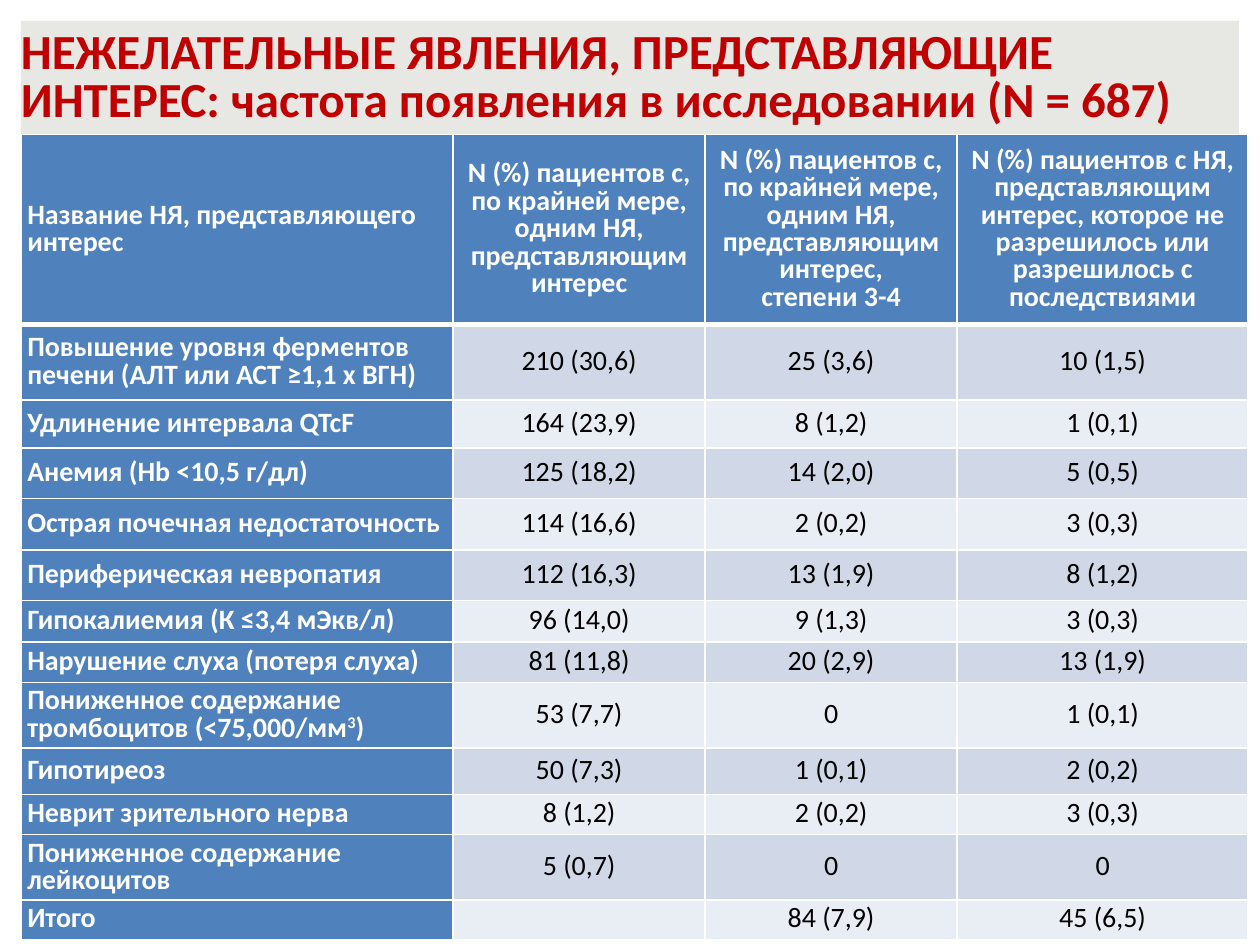
from lxml.etree import SubElement
from pptx import Presentation
from pptx.dml.color import RGBColor
from pptx.enum.shapes import MSO_SHAPE as Shape
from pptx.enum.text import MSO_ANCHOR as Anchor, PP_ALIGN as Align
from pptx.oxml.ns import qn
from pptx.util import Inches, Pt

COLORS = {
    "panel": "E7E7E4", "title": "C00000", "head": "4F81BD", "odd": "D0D8E8",
    "even": "E9EDF4", "white": "FFFFFF", "black": "000000",
}
TITLE = ("НЕЖЕЛАТЕЛЬНЫЕ ЯВЛЕНИЯ, ПРЕДСТАВЛЯЮЩИЕ ИНТЕРЕС: "
         "частота появления в исследовании (N = 687)")
AT_LEAST_ONE = "N (%) пациентов с, по крайней мере, одним НЯ, представляющим интерес"
HEADER = (
    "Название НЯ, представляющего интерес",
    AT_LEAST_ONE,
    AT_LEAST_ONE + ",\nстепени 3-4",
    "N (%) пациентов с НЯ, представляющим интерес, которое не разрешилось "
    "или разрешилось с последствиями",
)
# Text between carets is superscript.
EVENTS = [
    ("Повышение уровня ферментов печени (АЛТ или АСТ ≥1,1 х ВГН)",
     "210 (30,6)", "25 (3,6)", "10 (1,5)"),
    ("Удлинение интервала QTcF", "164 (23,9)", "8 (1,2)", "1 (0,1)"),
    ("Анемия (Hb <10,5 г/дл)", "125 (18,2)", "14 (2,0)", "5 (0,5)"),
    ("Острая почечная недостаточность", "114 (16,6)", "2 (0,2)", "3 (0,3)"),
    ("Периферическая невропатия", "112 (16,3)", "13 (1,9)", "8 (1,2)"),
    ("Гипокалиемия (К ≤3,4 мЭкв/л)", "96 (14,0)", "9 (1,3)", "3 (0,3)"),
    ("Нарушение слуха (потеря слуха)", "81 (11,8)", "20 (2,9)", "13 (1,9)"),
    ("Пониженное содержание тромбоцитов (<75,000/мм^3^)",
     "53 (7,7)", "0", "1 (0,1)"),
    ("Гипотиреоз", "50 (7,3)", "1 (0,1)", "2 (0,2)"),
    ("Неврит зрительного нерва", "8 (1,2)", "2 (0,2)", "3 (0,3)"),
    ("Пониженное содержание лейкоцитов", "5 (0,7)", "0", "0"),
    ("Итого", "", "84 (7,9)", "45 (6,5)"),
]
COLUMN_SPANS = (20.58, 12, 12, 13.86)
ROW_SPANS = (9.06, 3.6, 2.28, 2.4, 2.46, 2.4, 1.98, 1.92, 3.12, 2.22, 1.92, 3.12, 1.86)


class SlideBuilder:
    """Style and current slide, laid out on a grid of 60 columns by 45 rows."""

    font_name = "Calibri"
    line_spacing = 0.8

    def __init__(self, presentation):
        self.column = presentation.slide_width / 60
        self.row = presentation.slide_height / 45
        self.slide = presentation.slides.add_slide(presentation.slide_layouts[5])

    def box(self, left, top, width, height):
        return (round(left * self.column), round(top * self.row),
                round(width * self.column), round(height * self.row))

    def color(self, name):
        return RGBColor.from_string(COLORS[name])

    def set_text(self, frame, text, size, color, bold, align=Align.LEFT):
        for index, line in enumerate(text.split("\n")):
            paragraph = frame.add_paragraph() if index else frame.paragraphs[0]
            paragraph.alignment = align
            paragraph.line_spacing = self.line_spacing
            font = paragraph.font
            font.name, font.size, font.bold = self.font_name, Pt(size), bold
            font.color.rgb = self.color(color)
            for part, piece in enumerate(line.split("^")):
                if piece:
                    run = paragraph.add_run()
                    run.text = piece
                    if part % 2:
                        run._r.get_or_add_rPr().set("baseline", "30000")

    def title(self, text, *place):
        title = self.slide.shapes.title
        title.left, title.top, title.width, title.height = self.box(*place)
        frame = title.text_frame
        frame.word_wrap = True
        frame.vertical_anchor = Anchor.MIDDLE
        frame.margin_left = frame.margin_right = 0
        frame.margin_top = frame.margin_bottom = 0
        self.set_text(frame, text, 28, "title", True)

    def panel(self, *place):
        """Add the grey panel behind the title."""
        panel = self.slide.shapes.add_shape(Shape.RECTANGLE, *self.box(*place))
        panel.shadow.inherit = False
        panel.fill.solid()
        panel.fill.fore_color.rgb = self.color("panel")
        panel.line.fill.background()
        self.slide.shapes.title.element.addprevious(panel.element)

    def borders(self, cell, **widths):
        properties = cell._tc.get_or_add_tcPr()
        for side in "LRTB":
            line = SubElement(properties, qn(f"a:ln{side}"),
                              w=str(Pt(widths.get(side, 1))))
            fill = SubElement(line, qn("a:solidFill"))
            SubElement(fill, qn("a:srgbClr"), val=COLORS["white"])

    def cell(self, cell, text, row, column):
        is_head = row == 0 or column == 0
        cell.margin_left = cell.margin_right = Inches(0.05)
        cell.margin_top = cell.margin_bottom = 0
        cell.vertical_anchor = Anchor.MIDDLE
        self.borders(cell, T=3 if row == 1 else 1, B=3 if row == 0 else 1)
        cell.fill.solid()
        cell.fill.fore_color.rgb = self.color(
            "head" if is_head else "odd" if row % 2 else "even")
        self.set_text(cell.text_frame, text, 16, "white" if is_head else "black",
                      is_head, Align.CENTER if column else Align.LEFT)

    def table(self, rows, left, top, column_spans, row_spans):
        place = self.box(left, top, sum(column_spans), sum(row_spans))
        table = self.slide.shapes.add_table(
            len(row_spans), len(column_spans), *place).table
        for column, span in zip(table.columns, column_spans):
            column.width = round(span * self.column)
        for row, span in zip(table.rows, row_spans):
            row.height = round(span * self.row)
        for row, texts in enumerate(rows):
            for column, text in enumerate(texts):
                self.cell(table.cell(row, column), text, row, column)


def main():
    presentation = Presentation()
    presentation.slide_width, presentation.slide_height = Inches(10), Inches(7.5)
    builder = SlideBuilder(presentation)
    builder.panel(1, 1, 58, 43)
    builder.title(TITLE, 1, 1.5, 58.5, 4.56)
    builder.table([HEADER, *EVENTS], 1, 6.4, COLUMN_SPANS, ROW_SPANS)
    presentation.save("out.pptx")


if __name__ == "__main__":
    main()
